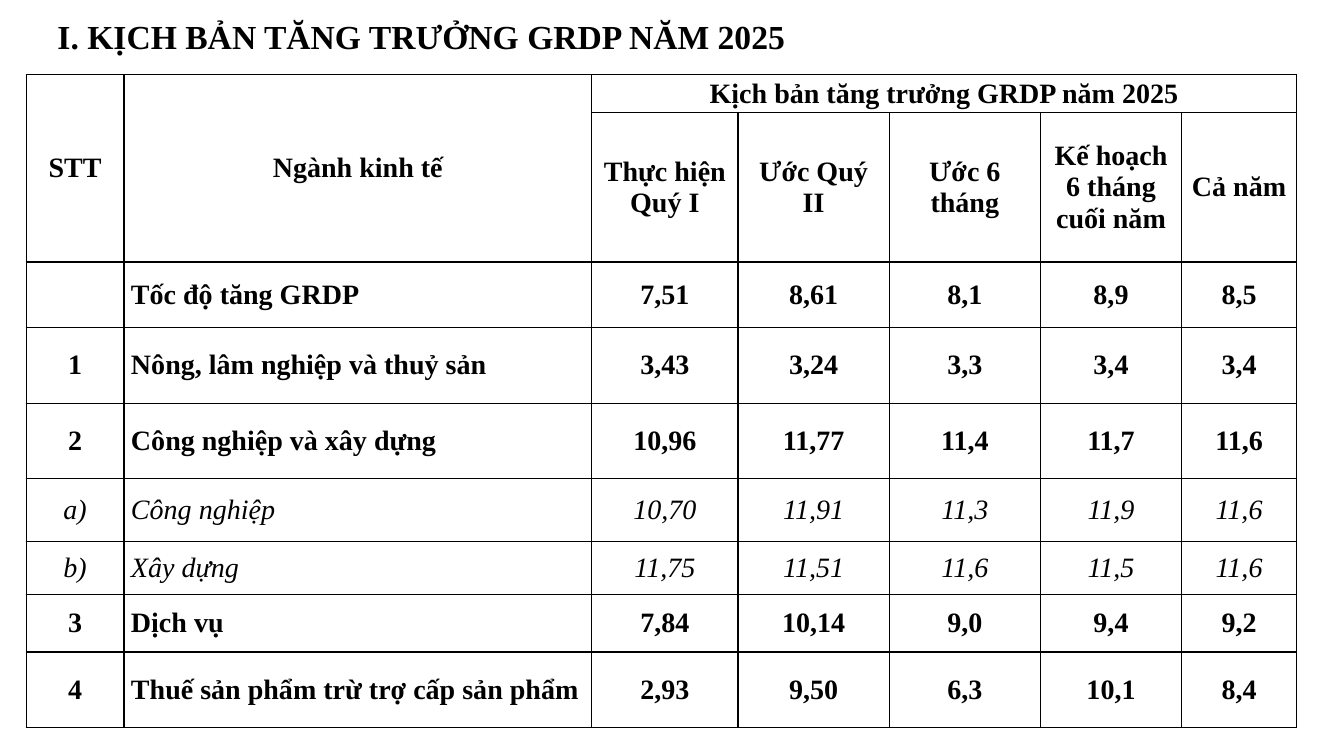
from lxml import etree
from pptx import Presentation
from pptx.dml.color import RGBColor
from pptx.enum.text import MSO_ANCHOR, MSO_AUTO_SIZE, PP_ALIGN
from pptx.oxml.ns import qn
from pptx.util import Inches, Pt

BLACK = RGBColor(0, 0, 0)
FONT = "Times New Roman"
LEFT, CENTER = PP_ALIGN.LEFT, PP_ALIGN.CENTER
TOP, MIDDLE = MSO_ANCHOR.TOP, MSO_ANCHOR.MIDDLE
SHAPE_GROWS = MSO_AUTO_SIZE.SHAPE_TO_FIT_TEXT

COLUMN_WIDTHS = [0.97, 4.64, 1.45, 1.5, 1.5, 1.4, 1.14, 0.24]
ROW_HEIGHTS = [0.38, 0.57, 0.91, 0.65, 0.75, 0.75, 0.62, 0.53, 0.57, 0.75]
SPARE_COLUMN = len(COLUMN_WIDTHS) - 1
HEADER_ROWS = 3
ROWS = [
    ["STT", "Ngành kinh tế", "Kịch bản tăng trưởng GRDP năm 2025"],
    ["", "", "Thực hiện Quý I", "Ước Quý II", "Ước 6 tháng",
     "Kế hoạch 6 tháng cuối năm", "Cả năm"],
    [],
    ["", "Tốc độ tăng GRDP", "7,51", "8,61", "8,1", "8,9", "8,5"],
    ["1", "Nông, lâm nghiệp và thuỷ sản", "3,43", "3,24", "3,3", "3,4", "3,4"],
    ["2", "Công nghiệp và xây dựng", "10,96", "11,77", "11,4", "11,7", "11,6"],
    ["a)", "Công nghiệp", "10,70", "11,91", "11,3", "11,9", "11,6"],
    ["b)", "Xây dựng", "11,75", "11,51", "11,6", "11,5", "11,6"],
    ["3", "Dịch vụ", "7,84", "10,14", "9,0", "9,4", "9,2"],
    ["4", "Thuế sản phẩm trừ trợ cấp sản phẩm", "2,93", "9,50", "6,3", "10,1", "8,4"],
]


def style_font(font, size, bold=True):
    font.name, font.size = FONT, Pt(size)
    font.bold, font.italic = bold, not bold
    font.color.rgb = BLACK


def draw_borders(cell, visible_sides):
    properties = cell._tc.get_or_add_tcPr()
    for side in "LRTB":
        line = etree.SubElement(properties, qn(f"a:ln{side}"), w=str(Pt(1)))
        if side in visible_sides:
            fill = etree.SubElement(line, qn("a:solidFill"))
            etree.SubElement(fill, qn("a:srgbClr"), val=str(BLACK))
        else:
            etree.SubElement(line, qn("a:noFill"))


prs = Presentation()
prs.slide_width, prs.slide_height = Inches(13.33), Inches(7.5)
slide = prs.slides.add_slide(prs.slide_layouts[5])

heading = slide.shapes.title
heading.left, heading.top = Inches(0.47), Inches(0.11)
heading.width, heading.height = Inches(10.77), Inches(0.5)
heading_frame = heading.text_frame
heading_frame.text = "I. KỊCH BẢN TĂNG TRƯỞNG GRDP NĂM 2025"
heading_frame.auto_size = SHAPE_GROWS
heading_frame.vertical_anchor = TOP
heading_frame.paragraphs[0].alignment = LEFT
style_font(heading_frame.paragraphs[0].runs[0].font, 24)

growth = slide.shapes.add_table(
    len(ROW_HEIGHTS), len(COLUMN_WIDTHS), Inches(0.26), Inches(0.74),
    Inches(sum(COLUMN_WIDTHS)), Inches(sum(ROW_HEIGHTS))).table
growth.first_row = growth.horz_banding = False
for column, width in zip(growth.columns, COLUMN_WIDTHS):
    column.width = Inches(width)
for row, height in zip(growth.rows, ROW_HEIGHTS):
    row.height = Inches(height)

for r, texts in enumerate(ROWS):
    is_sector = not (texts and texts[0].endswith(")"))
    for c in range(len(COLUMN_WIDTHS)):
        cell = growth.cell(r, c)
        draw_borders(cell, "L" if c == SPARE_COLUMN else "LRTB")
        cell.fill.background()
        cell.vertical_anchor = MIDDLE
        side_margin = Inches(0.07 if r < HEADER_ROWS or c < 3 else 0)
        cell.margin_left = cell.margin_right = side_margin
        cell.margin_top = cell.margin_bottom = 0
        paragraph = cell.text_frame.paragraphs[0]
        paragraph.alignment = LEFT if c == 1 and r >= HEADER_ROWS else CENTER
        style_font(paragraph.font, 20, is_sector)
        if c < len(texts) and texts[c]:
            run = paragraph.add_run()
            run.text = texts[c]
            style_font(run.font, 20, is_sector)

growth.cell(0, 2).merge(growth.cell(0, SPARE_COLUMN - 1))
for c in range(SPARE_COLUMN):
    growth.cell(0 if c < 2 else 1, c).merge(growth.cell(HEADER_ROWS - 1, c))

prs.save("out.pptx")
